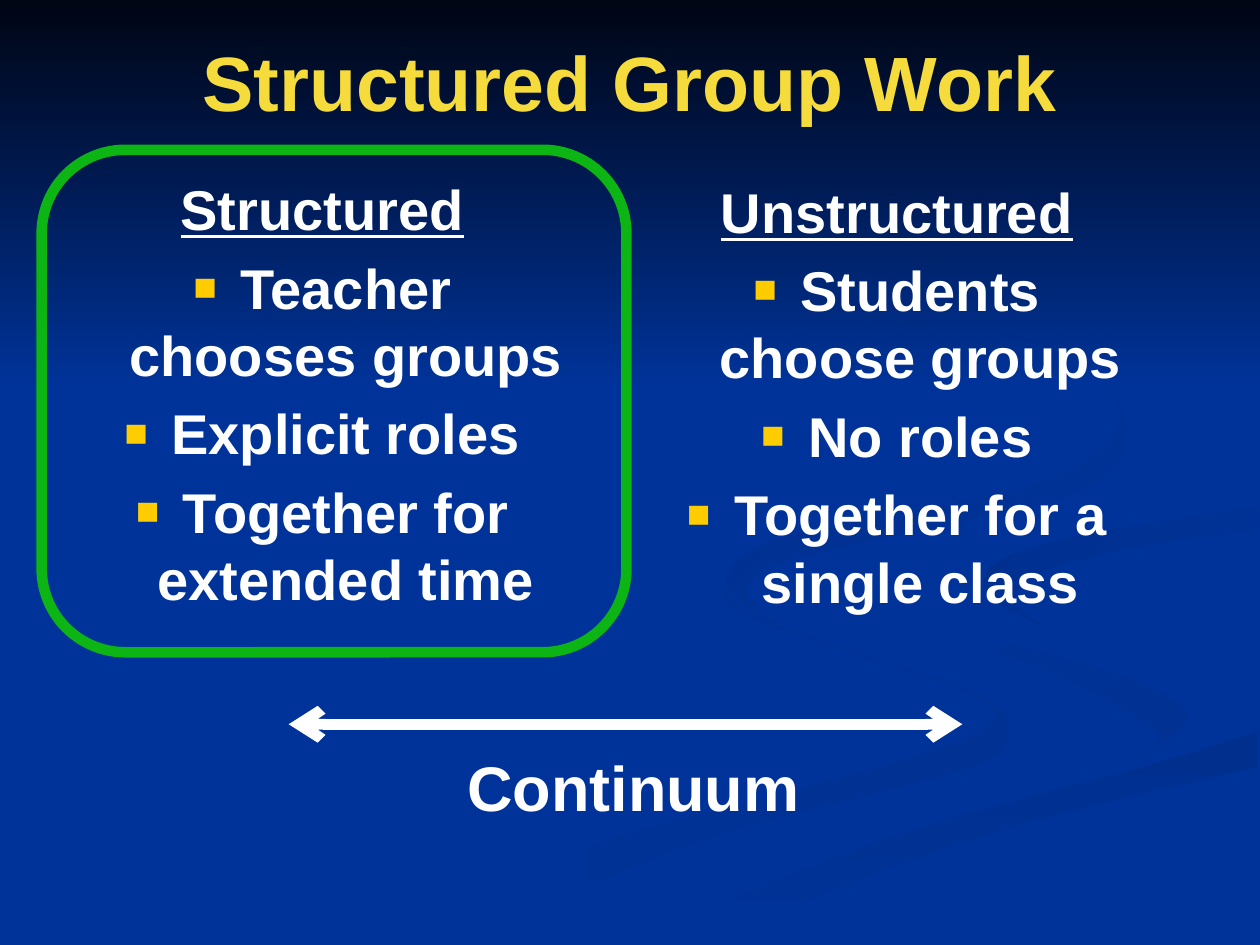
"""Build the slide comparing structured and unstructured group work."""
from dataclasses import dataclass
from typing import Optional

from lxml import etree
from pptx import Presentation
from pptx import util as u
from pptx.dml.color import RGBColor
from pptx.enum import shapes, text
from pptx.oxml import ns

FONT = "Arial"
BLUE = RGBColor(0x00, 0x33, 0x99)
NIGHT = RGBColor(0x00, 0x05, 0x14)
SHADE = RGBColor(0x00, 0x2F, 0x8E)
LIGHT_SHADE = RGBColor(0x00, 0x31, 0x93)
YELLOW = RGBColor(0xF6, 0xDB, 0x3C)
GOLD = RGBColor(0xFF, 0xCC, 0x00)
GREEN = RGBColor(0x0C, 0xB4, 0x14)
WHITE = RGBColor(0xFF, 0xFF, 0xFF)
SWIRL_UNIT = u.Cm(0.0254)
CURVE_STEPS = 6


@dataclass(frozen=True)
class Swirl:
    start_color: RGBColor
    end_color: RGBColor
    angle: int
    edges: tuple


@dataclass(frozen=True)
class Column:
    left: float
    top: float
    heading: str
    bullets: tuple


SWIRLS = (
    Swirl(BLUE, LIGHT_SHADE, 0, (
        ((575, 459), (594, 485), (682, 519), (781, 553), (800, 581), (769, 609), (564, 665),
         (361, 749)),
        ((300, 749), (458, 674), (684, 613), (780, 579), (776, 553), (679, 519), (581, 484),
         (575, 459)))),
    Swirl(BLUE, LIGHT_SHADE, 45, (
        ((724, 464), (758, 498), (888, 535), (943, 570), (894, 605)),
        ((894, 605), (918, 581), (838, 536), (746, 500), (724, 464)))),
    Swirl(SHADE, BLUE, 90, (
        ((503, 749), (630, 693), (764, 647), (903, 610), (998, 581)),
        ((998, 609), (821, 651), (670, 702), (571, 749)))),
    Swirl(SHADE, BLUE, 45, (
        ((998, 402), (865, 424), (799, 442), (781, 460), (791, 478), (826, 496)),
        ((826, 496), (805, 476), (828, 453), (896, 435), (998, 420)))),
    Swirl(SHADE, BLUE, 45, (
        ((762, 233), (864, 291), (894, 344), (855, 391), (683, 430), (606, 452), (594, 475),
         (622, 500)),
        ((622, 500), (577, 462), (625, 426), (818, 386), (889, 335), (846, 279), (762, 233)))),
    Swirl(NIGHT, BLUE, 90, (((0, 0), (1000, 0)), ((1000, 308), (0, 308)))),
)

COLUMNS = (
    Column(1.27, 3.4, "Structured",
           ("Teacher chooses groups", "Explicit roles", "Together for extended time")),
    Column(12.85, 3.45, "Unstructured",
           ("Students choose groups", "No roles", "Together for a single class")),
)


def smooth_edge(edge: tuple) -> list:
    """Return points of a Catmull-Rom curve through the given points."""
    padded = (edge[0], *edge, edge[-1])
    curve = [edge[0]]
    for before, start, end, after in zip(padded, padded[1:], padded[2:], padded[3:]):
        for step in range(1, CURVE_STEPS + 1):
            t = step / CURVE_STEPS
            curve.append(tuple(
                (2 * b + (c - a) * t + (2 * a - 5 * b + 4 * c - d) * t ** 2
                 + (3 * b - a - 3 * c + d) * t ** 3) / 2
                for a, b, c, d in zip(before, start, end, after)))
    return curve


def draw_swirl(slide, swirl: Swirl) -> None:
    """Draw one closed gradient outline of the backdrop."""
    points = [point for edge in swirl.edges for point in smooth_edge(edge)]
    builder = slide.shapes.build_freeform(*points[0], scale=SWIRL_UNIT)
    builder.add_line_segments(points[1:], close=True)
    shape = builder.convert_to_shape()
    shape.shadow.inherit = False
    shape.line.fill.background()
    shape.fill.gradient()
    shape.fill.gradient_angle = -swirl.angle % 360
    for stop, color in zip(shape.fill.gradient_stops, (swirl.start_color, swirl.end_color)):
        stop.color.rgb = color


def add_frame(slide, left: float, top: float, width: float, height: float):
    """Add a wrapping text box measured in centimetres and return its frame."""
    box = slide.shapes.add_textbox(u.Cm(left), u.Cm(top), u.Cm(width), u.Cm(height))
    box.text_frame.word_wrap = True
    return box.text_frame


def style_paragraph(paragraph, words: str, size: float, color: RGBColor,
                    underline: Optional[bool] = None) -> None:
    """Fill a paragraph with centred bold text."""
    paragraph.text = words
    paragraph.alignment = text.PP_ALIGN.CENTER
    font = paragraph.font
    font.name, font.size, font.bold, font.underline = FONT, u.Pt(size), True, underline
    font.color.rgb = color


def add_bullet(paragraph) -> None:
    """Give a paragraph a gold square bullet."""
    properties = paragraph._p.get_or_add_pPr()
    color = etree.SubElement(properties, ns.qn("a:buClr"))
    etree.SubElement(color, ns.qn("a:srgbClr"), val=str(GOLD))
    etree.SubElement(properties, ns.qn("a:buSzPct"), val="70000")
    etree.SubElement(properties, ns.qn("a:buFont"), typeface=FONT)
    etree.SubElement(properties, ns.qn("a:buChar"), char="■")


def draw_column(slide, column: Column) -> None:
    """Draw an underlined heading with its bullets."""
    frame = add_frame(slide, column.left, column.top, 10.46, 13.61)
    for index, words in enumerate((column.heading, *column.bullets)):
        paragraph = frame.add_paragraph() if index else frame.paragraphs[0]
        properties = paragraph._p.get_or_add_pPr()
        properties.set("marL", str(u.Cm(0.95)))
        properties.set("indent", str(u.Cm(-0.95)))
        if index:
            add_bullet(paragraph)
            paragraph.space_before = u.Pt(6.4)
        style_paragraph(paragraph, words, 32, WHITE, underline=index == 0)


def draw_continuum_arrow(slide) -> None:
    """Draw the double-headed line between the two extremes."""
    arrow = slide.shapes.add_connector(
        shapes.MSO_CONNECTOR.STRAIGHT, u.Cm(5.82), u.Cm(14.6), u.Cm(19.4), u.Cm(14.6))
    arrow.line.color.rgb = WHITE
    arrow.line.width = u.Pt(6)
    line = arrow.line._get_or_add_ln()
    for end in ("a:headEnd", "a:tailEnd"):
        etree.SubElement(line, ns.qn(end), type="arrow")
    etree.SubElement(arrow._element.spPr, ns.qn("a:effectLst"))


def draw_highlight(slide) -> None:
    """Draw the green rounded outline around the structured column."""
    shape = slide.shapes.add_shape(
        shapes.MSO_SHAPE.ROUNDED_RECTANGLE, u.Cm(0.84), u.Cm(3.02), u.Cm(11.79), u.Cm(10.13))
    shape.shadow.inherit = False
    shape.fill.background()
    shape.line.color.rgb = GREEN
    shape.line.width = u.Pt(6)


def main() -> None:
    """Assemble and save the presentation."""
    presentation = Presentation()
    presentation.slide_width, presentation.slide_height = u.Cm(25.4), u.Cm(19.05)
    slide = presentation.slides.add_slide(presentation.slide_layouts[6])
    slide.background.fill.solid()
    slide.background.fill.fore_color.rgb = BLUE
    for swirl in SWIRLS:
        draw_swirl(slide, swirl)
    title = add_frame(slide, 1.27, 0.03, 22.86, 3.18)
    title.vertical_anchor = text.MSO_ANCHOR.MIDDLE
    style_paragraph(title.paragraphs[0], "Structured Group Work", 44, YELLOW)
    for column in COLUMNS:
        draw_column(slide, column)
    draw_continuum_arrow(slide)
    caption = add_frame(slide, 8.25, 14.96, 9.04, 1.8)
    style_paragraph(caption.paragraphs[0], "Continuum", 36, WHITE)
    draw_highlight(slide)
    presentation.save("out.pptx")


if __name__ == "__main__":
    main()
